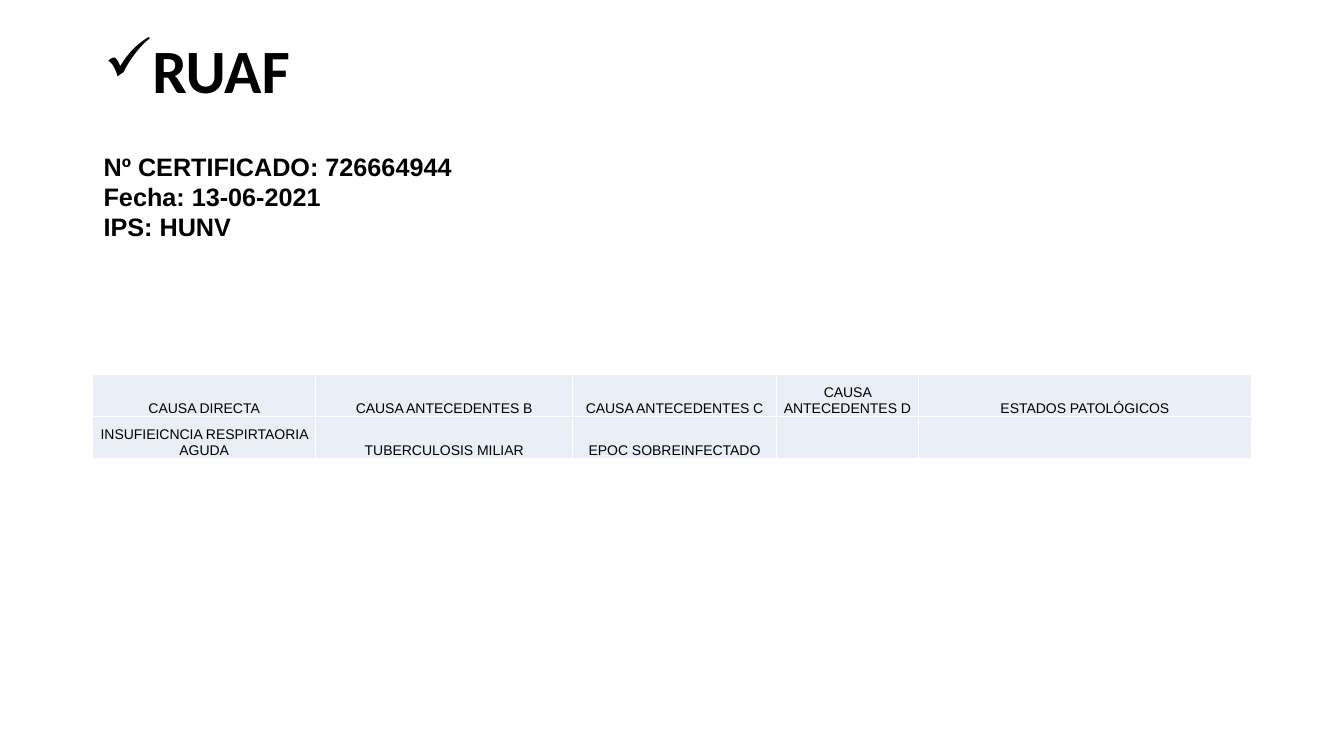
from lxml.etree import SubElement
from pptx import Presentation
from pptx.dml.color import RGBColor
from pptx.enum.text import MSO_ANCHOR as Anchor, MSO_AUTO_SIZE as AutoSize, PP_ALIGN as Align
from pptx.oxml.ns import qn
from pptx.util import Inches, Pt

COLORS = {"text": "000000", "cell": "EAEFF7", "border": "FFFFFF"}

CERTIFICATE = ["Nº CERTIFICADO: 726664944", "Fecha: 13-06-2021", "IPS: HUNV"]
CAUSES = [
    ["CAUSA DIRECTA", "CAUSA ANTECEDENTES B", "CAUSA ANTECEDENTES C",
     "CAUSA ANTECEDENTES D", "ESTADOS PATOLÓGICOS"],
    ["INSUFIEICNCIA RESPIRTAORIA AGUDA", "TUBERCULOSIS MILIAR",
     "EPOC SOBREINFECTADO", "", ""],
]
COLUMN_WIDTHS = [2.21, 2.55, 2.02, 1.41, 3.3]
ROW_HEIGHT = 0.42


def format_runs(para, font_name, size, bold=False):
    for span in para.runs:
        span.font.name = font_name
        span.font.size = Pt(size)
        span.font.bold = bold
        span.font.color.rgb = RGBColor.from_string(COLORS["text"])


def add_title(page, text):
    title = page.shapes.title
    title.left, title.top = Inches(0.93), Inches(0)
    title.width, title.height = Inches(11.5), Inches(1.45)
    frame = title.text_frame
    frame.text = text
    frame.vertical_anchor = Anchor.MIDDLE
    para = frame.paragraphs[0]
    para.alignment = Align.LEFT
    para.line_spacing = 0.9
    format_runs(para, "Calibri", 44, bold=True)
    # Check mark bullet with a hanging indent
    props = para._p.get_or_add_pPr()
    props.set("marL", str(Inches(0.31)))
    props.set("indent", str(-Inches(0.31)))
    SubElement(props, qn("a:buChar"), char="✓")


def add_text(page, lines, left, top, width, height):
    frame = page.shapes.add_textbox(
        Inches(left), Inches(top), Inches(width), Inches(height)).text_frame
    frame.word_wrap = True
    frame.auto_size = AutoSize.SHAPE_TO_FIT_TEXT
    frame.text = "\n".join(lines)
    for para in frame.paragraphs:
        format_runs(para, "Arial", 18, bold=True)


def add_borders(cell):
    props = cell._tc.get_or_add_tcPr()
    for side in ("lnL", "lnR", "lnT", "lnB"):
        line = SubElement(props, qn(f"a:{side}"), w=str(Pt(1)))
        fill = SubElement(line, qn("a:solidFill"))
        SubElement(fill, qn("a:srgbClr"), val=COLORS["border"])


def format_cell(cell, text):
    add_borders(cell)
    cell.fill.solid()
    cell.fill.fore_color.rgb = RGBColor.from_string(COLORS["cell"])
    cell.margin_left = cell.margin_right = cell.margin_top = Inches(0.01)
    cell.margin_bottom = Inches(0)
    cell.vertical_anchor = Anchor.BOTTOM
    cell.text = text
    para = cell.text_frame.paragraphs[0]
    para.alignment = Align.CENTER
    para.font.size = Pt(10)
    format_runs(para, "Arial", 10)


def add_cause_table(page, rows, left, top):
    table = page.shapes.add_table(
        len(rows), len(COLUMN_WIDTHS), Inches(left), Inches(top),
        Inches(sum(COLUMN_WIDTHS)), Inches(ROW_HEIGHT * len(rows))).table
    table.first_row = table.horz_banding = False
    for column, width in zip(table.columns, COLUMN_WIDTHS):
        column.width = Inches(width)
    for row, texts in zip(table.rows, rows):
        row.height = Inches(ROW_HEIGHT)
        for cell, text in zip(row.cells, texts):
            format_cell(cell, text)


def main():
    deck = Presentation()
    deck.slide_width, deck.slide_height = Inches(13.33), Inches(7.5)
    page = deck.slides.add_slide(deck.slide_layouts.get_by_name("Title Only"))

    # Heading and certificate details
    add_title(page, "RUAF")
    add_text(page, CERTIFICATE, 0.93, 1.45, 9.5, 1.01)

    # Causes of death
    add_cause_table(page, CAUSES, 0.92, 3.71)

    deck.save("out.pptx")


if __name__ == "__main__":
    main()
